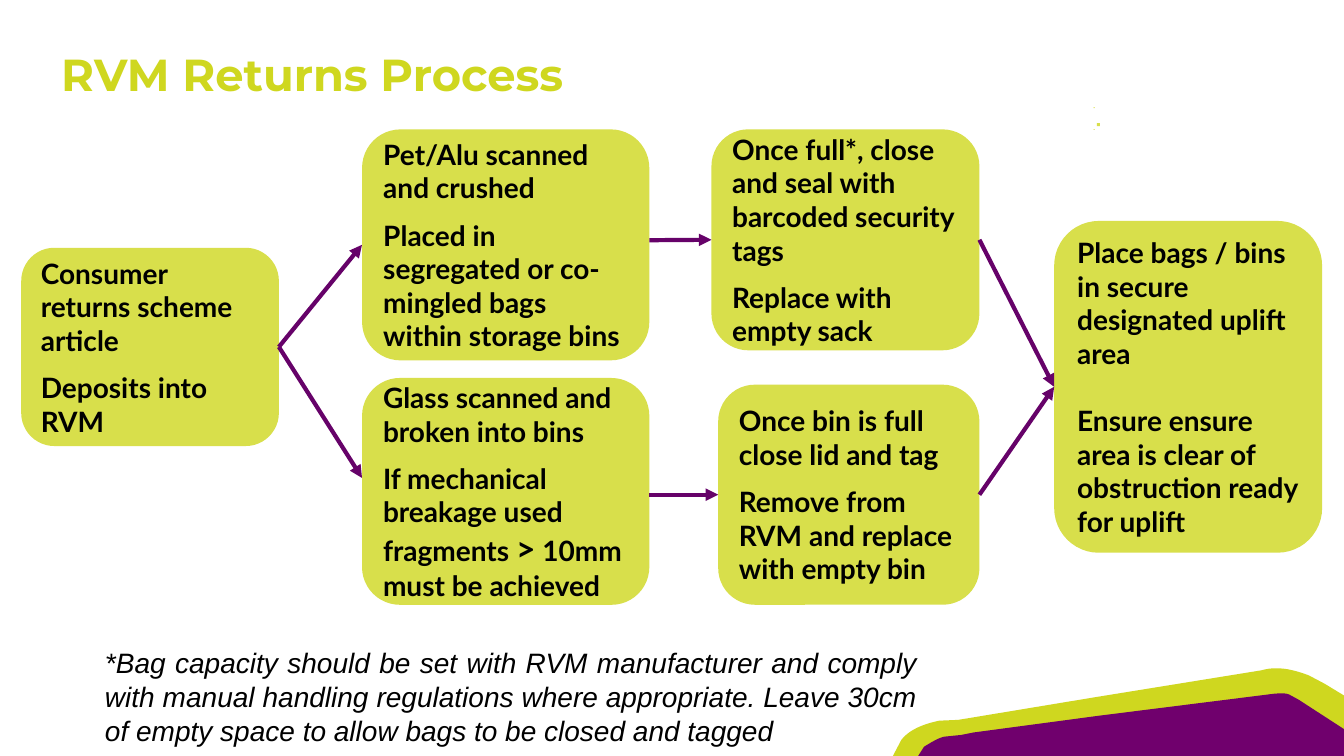
from dataclasses import dataclass
from lxml.etree import SubElement
from pptx import Presentation
from pptx.dml.color import RGBColor
from pptx.enum.shapes import MSO_CONNECTOR, MSO_SHAPE
from pptx.enum.text import MSO_ANCHOR, PP_ALIGN
from pptx.oxml.ns import qn
from pptx.util import Inches, Pt

COLS, ROWS = 160, 90
WIDE = Inches(13.333)
CELL = WIDE / COLS


@dataclass(frozen=True)
class Theme:
    """Colours and type formats of the slide."""
    lime = RGBColor.from_string("CFD71F")
    pale = RGBColor.from_string("D8DF4B")
    plum = RGBColor.from_string("70006D")
    dark = RGBColor.from_string("660269")
    ink = RGBColor.from_string("000000")
    head = {"name": "Montserrat", "size": Pt(32), "bold": True}
    step = {"name": "Lato", "size": Pt(20), "bold": True}
    sign = {"name": "Lato", "size": Pt(24), "bold": True}
    note = {"name": "Arial", "size": Pt(20), "italic": True}
    gap = Pt(9.6)
    wide_gap = Pt(24)
    stroke = Pt(3)


THEME = Theme()

STEPS = {
    "return": ((2.53, 29.5, 30.67, 23.6), THEME.gap,
               ["Consumer returns scheme article", "Deposits into RVM"]),
    "crush": ((43.1, 15.4, 34.2, 27.5), THEME.gap,
              ["Pet/Alu scanned and crushed",
               "Placed in segregated or co-mingled bags within storage bins"]),
    "glass": ((43.1, 45, 34.2, 27), THEME.gap,
              ["Glass scanned and broken into bins",
               "If mechanical breakage used fragments |>| 10mm must be achieved"]),
    "seal": ((84.7, 15.4, 31.9, 26.3), THEME.gap,
             ["Once full*, close and seal with barcoded security tags",
              "Replace with empty sack"]),
    "tag": ((85.5, 45.8, 31.1, 26.2), THEME.gap,
            ["Once bin is full close lid and tag",
             "Remove from RVM and replace with empty bin"]),
    "uplift": ((125.5, 26.3, 31.9, 39.5), THEME.wide_gap,
               ["Place bags / bins in secure designated uplift area",
                "Ensure ensure area is clear of obstruction ready for uplift"]),
}

LINKS = [("return", "crush"), ("return", (43.1, 56.9)), ((77.3, 28.6), "seal"),
         ((77.3, 58.9), "tag"), ("tag", "uplift"), ("seal", "uplift")]

DOTS = [(130.2, 12.75, 0.12), (130.2, 15.36, 0.12), (130.6, 14.65, 0.36)]

BAND = [(106.3, 90), (107.3, 88.1), (108.2, 86.9, 109.9, 86.2, 111.8, 85.8),
        (114.1, 85.7), (130.4, 83), (150.2, 79.8),
        (151.9, 79.3, 153.7, 79.6, 155.8, 80.4), (157.7, 81.4),
        (160, 82.8), (160, 90)]

HILL = [(109.3, 90), (110, 88.9), (110.2, 88.8, 111.5, 87.9, 112.4, 87.7),
        (114.4, 87.5), (115.9, 87.2), (130.9, 85.2), (150.8, 82.7),
        (151.6, 82.6, 152.9, 82.4, 153.5, 82.7), (154.6, 83.3),
        (160, 86.8), (160, 90)]


def grid(*nums):
    """Turn grid units into slide lengths."""
    return [round(num * CELL) for num in nums]


def apply(item, form):
    """Set each value of a format on an item."""
    for key, value in form.items():
        setattr(item, key, value)


def paint(shape, color):
    """Give a shape a plain fill with no line or shadow."""
    shape.shadow.inherit = False
    shape.fill.solid()
    shape.fill.fore_color.rgb = color
    shape.line.fill.background()


def write(para, text, form, color):
    """Add one run of text to a paragraph."""
    run = para.add_run()
    run.text = text
    apply(run.font, form)
    run.font.color.rgb = color


def add_text(slide, area, text, form, color, frame=None, align=PP_ALIGN.LEFT):
    """Add a wrapped text box with one paragraph."""
    body = slide.shapes.add_textbox(*grid(*area)).text_frame
    apply(body, {"word_wrap": True, **(frame or {})})
    para = body.paragraphs[0]
    para.alignment = align
    write(para, text, form, color)


def add_step(slide, area, gap, lines):
    """Add a rounded step box with spaced paragraphs."""
    box = slide.shapes.add_shape(MSO_SHAPE.ROUNDED_RECTANGLE, *grid(*area))
    paint(box, THEME.pale)
    body = box.text_frame
    apply(body, {"word_wrap": True, "vertical_anchor": MSO_ANCHOR.MIDDLE})
    for row, line in enumerate(lines):
        para = body.add_paragraph() if row else body.paragraphs[0]
        para.alignment = PP_ALIGN.LEFT
        if row:
            para.space_before = gap
        for part, text in enumerate(line.split("|")):
            write(para, text, THEME.sign if part % 2 else THEME.step, THEME.ink)
    return box


def add_link(slide, boxes, start, end):
    """Draw an arrow between steps or grid points."""
    head, tail = boxes.get(start), boxes.get(end)
    first = (head.left + head.width, head.top + head.height // 2) if head else grid(*start)
    last = (tail.left, tail.top + tail.height // 2) if tail else grid(*end)
    link = slide.shapes.add_connector(MSO_CONNECTOR.STRAIGHT, *first, *last)
    if head:
        link.begin_connect(head, 3)
    if tail:
        link.end_connect(tail, 1)
    link.line.color.rgb = THEME.dark
    link.line.width = THEME.stroke
    SubElement(link.line._get_or_add_ln(), qn("a:tailEnd"), type="triangle")
    SubElement(link._element.spPr, qn("a:effectLst"))


def trace(path):
    """List the points of a path, with its cubic curves sampled."""
    points = []
    for step in path:
        if len(step) == 2:
            points.append(step)
            continue
        knots = [points[-1], step[:2], step[2:4], step[4:]]
        for part in range(1, 13):
            t = part / 12
            rates = ((1 - t) ** 3, 3 * t * (1 - t) ** 2, 3 * t * t * (1 - t), t ** 3)
            points.append(tuple(sum(rate * knot[axis] for rate, knot in zip(rates, knots))
                                for axis in (0, 1)))
    return points


def add_wave(slide, path, color):
    """Draw a filled outline with curved corners."""
    points = [grid(*point) for point in trace(path)]
    form = slide.shapes.build_freeform(*points[0])
    form.add_line_segments(points[1:], close=True)
    paint(form.convert_to_shape(), color)


def main():
    """Build and save the slide."""
    deck = Presentation()
    deck.slide_width, deck.slide_height = WIDE, round(ROWS * CELL)
    slide = deck.slides.add_slide(deck.slide_layouts[6])
    add_text(slide, (6.1, 5, 123, 7.7), "RVM Returns Process", THEME.head, THEME.lime)
    add_wave(slide, BAND, THEME.lime)
    add_wave(slide, HILL, THEME.plum)
    for left, top, size in DOTS:
        dot = slide.shapes.add_shape(MSO_SHAPE.RECTANGLE, *grid(left, top, size, size))
        paint(dot, THEME.pale)
    boxes = {name: add_step(slide, *step) for name, step in STEPS.items()}
    for start, end in LINKS:
        add_link(slide, boxes, start, end)
    flush = dict.fromkeys(("margin_left", "margin_top", "margin_right", "margin_bottom"), 0)
    add_text(slide, (12.5, 76.9, 96.7, 12.6),
             "*Bag capacity should be set with RVM manufacturer and comply with manual "
             "handling regulations where appropriate. Leave 30cm of empty space to allow "
             "bags to be closed and tagged",
             THEME.note, THEME.ink, flush, PP_ALIGN.JUSTIFY)
    deck.save("out.pptx")


if __name__ == "__main__":
    main()
